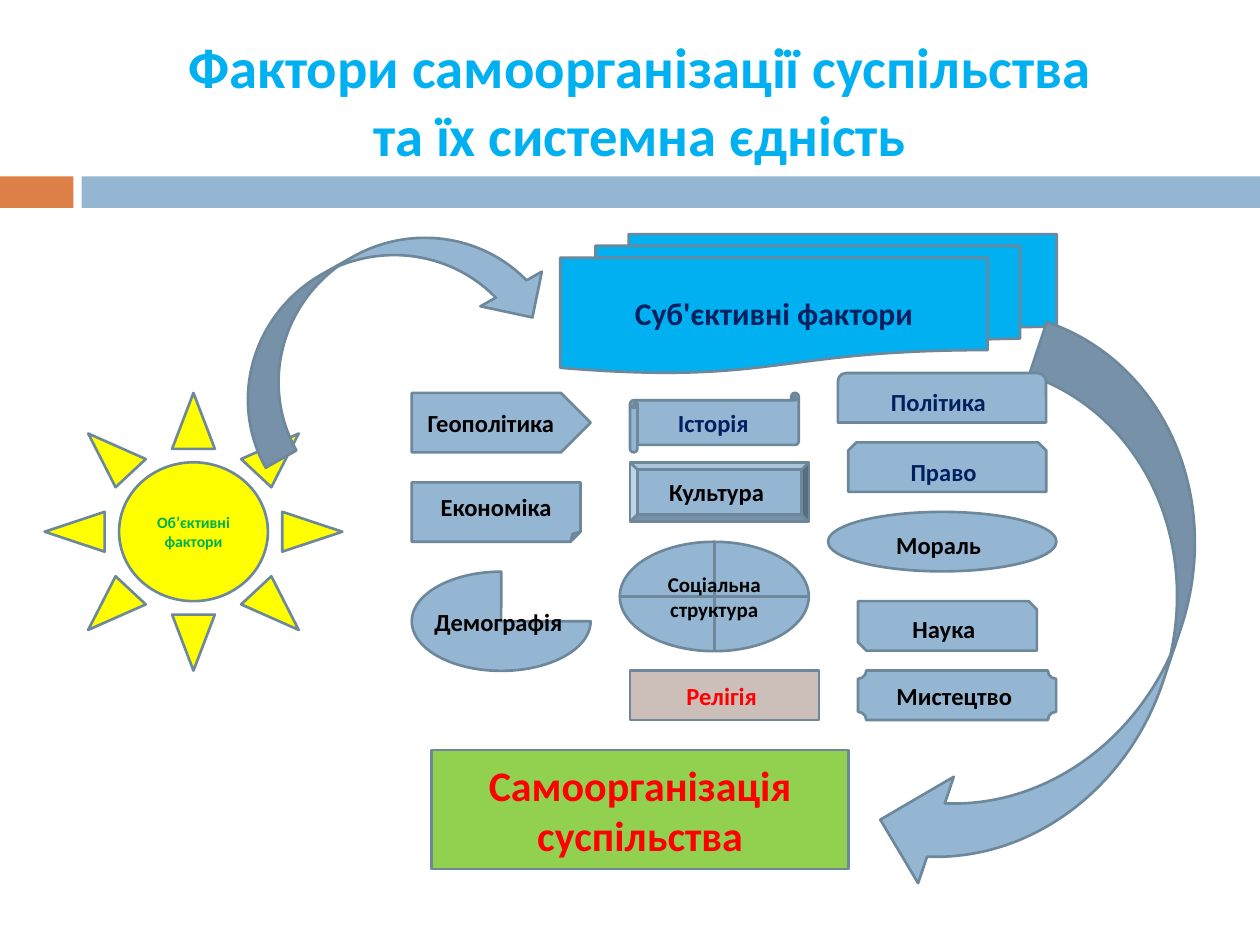
from typing import NamedTuple

from pptx import Presentation
from pptx.dml.color import RGBColor
from pptx.enum.shapes import MSO_SHAPE as Kind
from pptx.enum.text import MSO_ANCHOR, MSO_AUTO_SIZE, PP_ALIGN
from pptx.util import Pt

FONT = "Calibri"
COLORS = {
    "blue": "94B6D2", "edge": "6D879B", "orange": "DD8047", "sky": "00B0F0",
    "yellow": "FFFF00", "lime": "92D050", "clay": "CCBEB8", "navy": "002060",
    "red": "FF0000", "green": "00B050", "black": "000000", "white": "FFFFFF",
}


class Box(NamedTuple):
    left: float
    top: float
    width: float
    height: float


class Run(NamedTuple):
    text: str
    size: float = 14
    color: str = "black"
    bold: bool = True


class Item(NamedTuple):
    kind: Kind
    box: Box
    runs: tuple[Run, ...] = ()
    fill: str = "blue"
    edge: bool = True
    turn: float = 0


def paint(color: str) -> RGBColor:
    return RGBColor.from_string(COLORS[color])


def write(para, run: Run) -> None:
    part = para.add_run()
    part.text = run.text
    part.font.name = FONT
    part.font.size = Pt(run.size)
    part.font.bold = run.bold
    part.font.color.rgb = paint(run.color)


def place(shape, box: Box) -> None:
    shape.left, shape.top, shape.width, shape.height = map(Pt, box)


def draw(slide, item: Item) -> None:
    shape = slide.shapes.add_shape(item.kind, *map(Pt, item.box))
    shape.rotation = item.turn
    shape.shadow.inherit = False
    shape.fill.solid()
    shape.fill.fore_color.rgb = paint(item.fill)
    if item.edge:
        shape.line.color.rgb = paint("edge")
        shape.line.width = Pt(1.5)
    else:
        shape.line.fill.background()
    frame = shape.text_frame
    frame.word_wrap = True
    frame.vertical_anchor = MSO_ANCHOR.MIDDLE
    para = frame.paragraphs[0]
    para.alignment = PP_ALIGN.CENTER
    for run in item.runs:
        write(para, run)


def head(slide, lines: list[str]) -> None:
    title = slide.shapes.title
    place(title, Box(48.2, 18, 642.2, 77.8))
    frame = title.text_frame
    frame.word_wrap = True
    frame.auto_size = MSO_AUTO_SIZE.NONE
    frame.vertical_anchor = MSO_ANCHOR.MIDDLE
    para = frame.paragraphs[0]
    para.alignment = PP_ALIGN.CENTER
    for i, line in enumerate(lines):
        if i:
            para.add_line_break()
        write(para, Run(line, 32.4, "sky"))


GAP = Run(" ", 18, "white", False)
LEFT, MID = 235.3, 360
LOW, TALL = 28.3, 34

ITEMS = [
    Item(Kind.RECTANGLE, Box(0, 100.8, 42, 18), fill="orange", edge=False),
    Item(Kind.RECTANGLE, Box(46.6, 100.8, 673.4, 18), edge=False),
    Item(Kind.RECTANGLE, Box(246.6, 428.6, 238.4, 68),
         (Run("Самоорганізація суспільства", 24, "red"),), "lime"),
    Item(Kind.SUN, Box(25.5, 224.5, 170.1, 158.7),
         (Run("Об’єктивні фактори", 9, "green"),), "yellow"),
    Item(Kind.FLOWCHART_MULTIDOCUMENT, Box(320.2, 133.8, 283.7, 79.4),
         (Run("Суб'єктивні фактори", 18, "navy"),), "sky"),
    Item(Kind.HORIZONTAL_SCROLL, Box(MID, 224.5, 96.4, TALL),
         (Run("Історія ", color="navy"),)),
    Item(Kind.CURVED_LEFT_ARROW, Box(542.2, 195.8, 128.2, 331.9), turn=18.5),
    Item(Kind.ROUND_2_SAME_RECTANGLE, Box(478.8, 213.2, 119, LOW),
         (Run("Політика", color="navy"), GAP)),
    Item(Kind.SNIP_2_SAME_RECTANGLE, Box(484.7, 252.8, 113.2, LOW),
         (Run("Право", color="navy"), GAP)),
    Item(Kind.RECTANGLE, Box(MID, 383.2, 108, LOW),
         (Run("Релігія ", color="red"),), "clay"),
    Item(Kind.SNIP_2_DIAG_RECTANGLE, Box(490.3, 343.5, 102.2, LOW),
         (Run("Наука"), GAP)),
    Item(Kind.CURVED_DOWN_ARROW, Box(119.5, 144, 195.1, 80.6), turn=330.6),
    Item(Kind.PENTAGON, Box(LEFT, 224.5, 102.2, TALL), (Run("Геополітика "),)),
    Item(Kind.FOLDED_CORNER, Box(LEFT, 275.6, 96.4, TALL), (Run("Економіка"),)),
    Item(Kind.PIE, Box(LEFT, 326.7, 102.2, 56.7), (Run("Демографія "),)),
    Item(Kind.BEVEL, Box(MID, 264.2, 102.2, TALL), (Run("Культура "),)),
    Item(Kind.OVAL, Box(473.2, 292.5, 130.5, TALL), (Run("Мораль"), GAP)),
    Item(Kind.FLOWCHART_OR, Box(354.2, 309.6, 108, 62.5),
         (Run("Соціальна структура", 12),)),
    Item(Kind.PLAQUE, Box(490.3, 383.2, 113.2, LOW), (Run("Мистецтво "),)),
]


def main() -> None:
    deck = Presentation()
    deck.slide_width, deck.slide_height = Pt(720), Pt(540)
    slide = deck.slides.add_slide(deck.slide_layouts[5])
    head(slide, ["Фактори самоорганізації суспільства ", "та їх системна єдність "])
    for item in ITEMS:
        draw(slide, item)
    deck.save("out.pptx")


if __name__ == "__main__":
    main()
